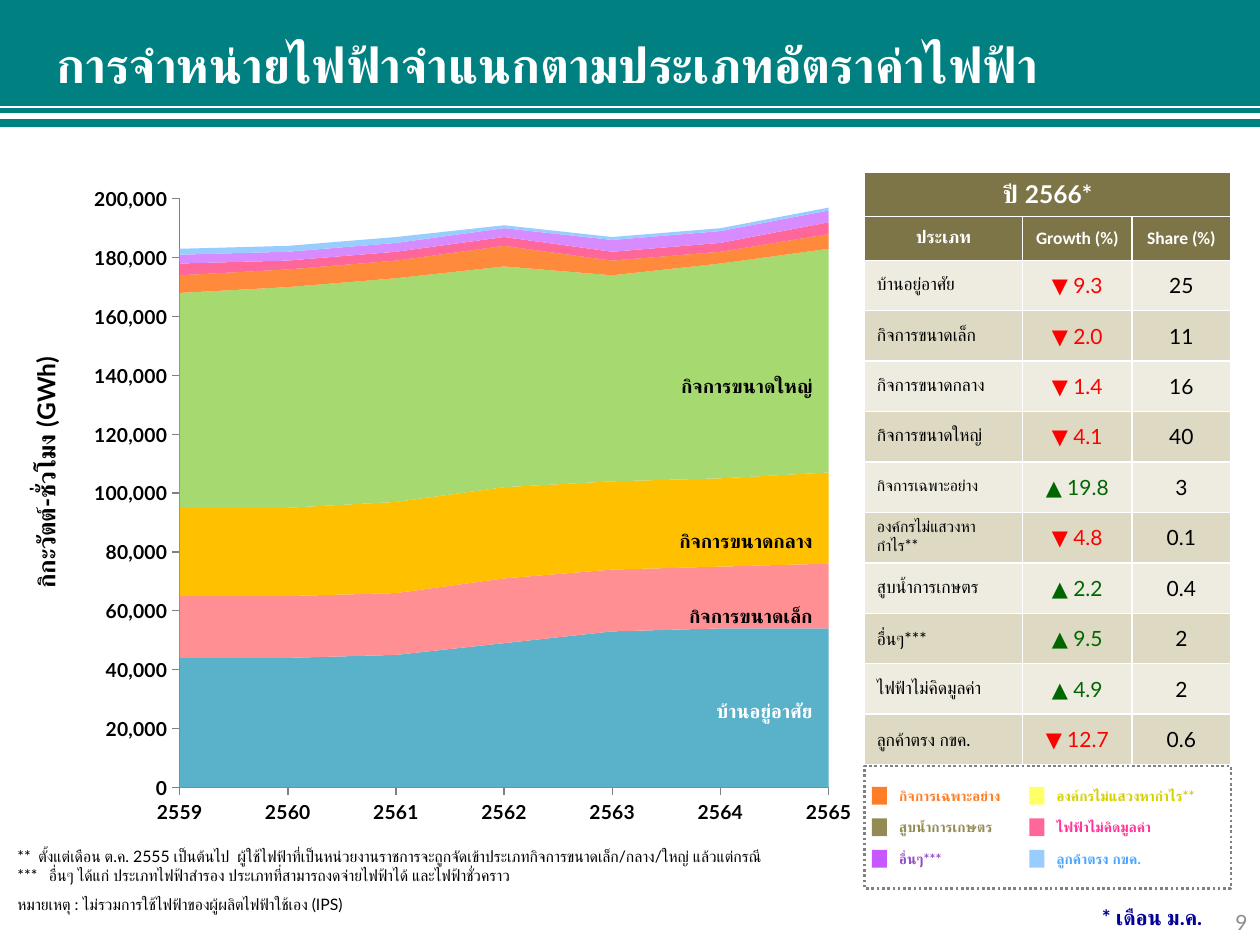
from dataclasses import dataclass
from typing import NamedTuple

from lxml.etree import SubElement
from pptx import Presentation
from pptx.chart.data import CategoryChartData
from pptx.dml.color import RGBColor
from pptx.enum.chart import XL_CHART_TYPE as ChartType, XL_TICK_MARK as Tick
from pptx.enum.dml import MSO_LINE
from pptx.enum.shapes import MSO_CONNECTOR, MSO_SHAPE
from pptx.enum.text import MSO_ANCHOR as Anchor, MSO_AUTO_SIZE as AutoSize, PP_ALIGN as Align
from pptx.oxml import parse_xml
from pptx.oxml.ns import nsdecls, qn
from pptx.util import Pt


@dataclass(frozen=True)
class Theme:
    font: str = "Lato"
    head_font: str = "Calibri"
    teal: str = "008080"
    white: str = "FFFFFF"
    black: str = "000000"
    grey: str = "808080"
    page: str = "8C8C8C"
    navy: str = "000099"
    olive: str = "7D7447"
    bands: tuple = ("EEECE1", "DDD9C3")
    up: str = "006600"
    down: str = "FF0000"
    title: int = 28
    large: int = 14
    value: int = 12
    label: int = 11
    body: int = 10
    note: int = 9
    key: int = 8


class Box(NamedTuple):
    x: float
    y: float
    w: float
    h: float

    def pts(self) -> list:
        return [Pt(v) for v in self]


class Series(NamedTuple):
    color: str
    thousands: tuple


class Rate(NamedTuple):
    name: str
    growth: float
    share: str
    size: int = 10


class Key(NamedTuple):
    name: str
    swatch: str
    color: str


T = Theme()
YEARS = [str(y) for y in range(2559, 2566)]
SERIES = [
    Series("5AB2CA", (44, 44, 45, 49, 53, 54, 54)),
    Series("FF8F92", (21, 21, 21, 22, 21, 21, 22)),
    Series("FFC000", (30, 30, 31, 31, 30, 30, 31)),
    Series("A7D971", (73, 75, 76, 75, 70, 73, 76)),
    Series("FF8A3B", (6, 6, 6, 7, 5, 4, 5)),
    Series("FFFF66", (0,) * 7),
    Series("948A54", (0,) * 7),
    Series("FF6699", (4, 3, 3, 3, 3, 3, 4)),
    Series("D88BFF", (3, 3, 3, 3, 4, 4, 4)),
    Series("99CCFF", (2, 2, 2, 1, 1, 1, 1)),
]
RATES = [
    Rate("บ้านอยู่อาศัย", -9.3, "25"),
    Rate("กิจการขนาดเล็ก", -2.0, "11"),
    Rate("กิจการขนาดกลาง", -1.4, "16"),
    Rate("กิจการขนาดใหญ่", -4.1, "40"),
    Rate("กิจการเฉพาะอย่าง", 19.8, "3", T.note),
    Rate("องค์กรไม่แสวงหากำไร**", -4.8, "0.1", T.note),
    Rate("สูบน้ำการเกษตร", 2.2, "0.4"),
    Rate("อื่นๆ***", 9.5, "2"),
    Rate("ไฟฟ้าไม่คิดมูลค่า", 4.9, "2"),
    Rate("ลูกค้าตรง กขค.", -12.7, "0.6"),
]
KEYS = [
    Key("กิจการเฉพาะอย่าง", "FF7D25", "FF7D25"),
    Key("องค์กรไม่แสวงหากำไร**", "FFFF66", "D5D000"),
    Key("สูบน้ำการเกษตร", "948A54", "948A54"),
    Key("ไฟฟ้าไม่คิดมูลค่า", "FF6699", "FF3399"),
    Key("อื่นๆ***", "C757FF", "954ECA"),
    Key("ลูกค้าตรง กขค.", "99CCFF", "4BA5FF"),
]
NOTES = [  # text, hanging indent, space before
    ("**\tตั้งแต่เดือน ต.ค. 2555 เป็นต้นไป  ผู้ใช้ไฟฟ้าที่เป็นหน่วยงานราชการจะถูกจัดเข้าประเภทกิจการขนาดเล็ก/กลาง/ใหญ่ แล้วแต่กรณี", 12, 0),
    ("***\tอื่นๆ ได้แก่ ประเภทไฟฟ้าสำรอง ประเภทที่สามารถงดจ่ายไฟฟ้าได้ และไฟฟ้าชั่วคราว", 18, 0),
    ("หมายเหตุ : ไม่รวมการใช้ไฟฟ้าของผู้ผลิตไฟฟ้าใช้เอง (IPS)", 0, 6),
]


def set_font(font, size: float, color: str = T.black, bold: bool = False, name: str = T.font) -> None:
    for key, value in {"size": Pt(size), "bold": bold, "name": name}.items():
        setattr(font, key, value)
    font.color.rgb = RGBColor.from_string(color)


def write(p, text: str, size: float, align=Align.LEFT, **fmt) -> None:
    p.alignment = align
    r = p.add_run()
    r.text = text
    set_font(r.font, size, **fmt)


def add_text(shapes, box: Box, text: str, size: float, align=Align.LEFT,
             anchor=Anchor.TOP, wrap: bool = True, **fmt):
    sp = shapes.add_textbox(*box.pts())
    for key, value in {"word_wrap": wrap, "vertical_anchor": anchor}.items():
        setattr(sp.text_frame, key, value)
    write(sp.text_frame.paragraphs[0], text, size, align, **fmt)
    return sp


def add_rect(shapes, box: Box, fill: str = ""):
    sp = shapes.add_shape(MSO_SHAPE.RECTANGLE, *box.pts())
    sp.shadow.inherit = False
    sp.line.fill.background()
    if fill:
        sp.fill.solid()
        sp.fill.fore_color.rgb = RGBColor.from_string(fill)
    else:
        sp.fill.background()
    return sp


def add_rule(shapes, y: float, width: float) -> None:
    c = shapes.add_connector(MSO_CONNECTOR.STRAIGHT, Pt(0), Pt(y), Pt(720), Pt(y))
    c.line.color.rgb = RGBColor.from_string(T.white)
    c.line.width = Pt(width)
    SubElement(c._element.spPr, qn("a:effectLst"))


def add_area_chart(shapes, box: Box) -> None:
    data = CategoryChartData(number_format="#,##0")
    data.categories = YEARS
    for n, s in enumerate(SERIES, 1):
        data.add_series(f"Series {n}", [v * 1000 for v in s.thousands])
    chart = shapes.add_chart(ChartType.AREA_STACKED, *box.pts(), data).chart
    chart.has_legend = chart.has_title = False
    for s, plotted in zip(SERIES, chart.plots[0].series):
        plotted.format.fill.solid()
        plotted.format.fill.fore_color.rgb = RGBColor.from_string(s.color)
    value = chart.value_axis
    for key, v in {"minimum_scale": 0, "maximum_scale": 200000, "major_unit": 20000}.items():
        setattr(value, key, v)
    value.tick_labels.number_format = "#,##0"
    value.tick_labels.number_format_is_linked = False
    for axis in (chart.category_axis, value):
        axis.has_major_gridlines = False
        axis.major_tick_mark = Tick.OUTSIDE
        axis.format.line.color.rgb = RGBColor.from_string(T.grey)
        set_font(axis.tick_labels.font, T.label, bold=True)
    # Areas start on the value axis, inside a fixed plot area
    for cross in value._element.findall(qn("c:crossBetween")):
        cross.set("val", "midCat")
    area = chart._chartSpace.chart.plotArea
    for old in area.findall(qn("c:layout")):
        area.remove(old)
    frame = {"x": 0.13, "y": 0.04, "w": 0.82, "h": 0.89}
    parts = '<c:layoutTarget val="inner"/><c:xMode val="edge"/><c:yMode val="edge"/>'
    parts += "".join(f'<c:{k} val="{v}"/>' for k, v in frame.items())
    area.insert(0, parse_xml(f'<c:layout {nsdecls("c")}><c:manualLayout>{parts}</c:manualLayout></c:layout>'))


def fill_cell(cell, text: str, fill: str, size: float, align=Align.CENTER, tight: bool = False, **fmt) -> None:
    cell.fill.solid()
    cell.fill.fore_color.rgb = RGBColor.from_string(fill)
    cell.vertical_anchor = Anchor.MIDDLE
    if tight:
        for side in ("left", "top", "right", "bottom"):
            setattr(cell, f"margin_{side}", Pt(0.7))
    write(cell.text_frame.paragraphs[0], text, size, align, **fmt)


def add_rate_table(shapes, box: Box) -> None:
    table = shapes.add_table(len(RATES) + 2, 3, *box.pts()).table
    for col, w in zip(table.columns, (90.5, 62.4, 56.6)):
        col.width = Pt(w)
    for i, row in enumerate(table.rows):
        row.height = Pt(25.1 if i < 2 else 28.8)
    head = {"color": T.white, "bold": True}
    table.cell(0, 0).merge(table.cell(0, 2))
    fill_cell(table.cell(0, 0), "ปี 2566*", T.olive, T.large, **head)
    for j, (text, font) in enumerate([("ประเภท", T.font), ("Growth (%)", T.head_font), ("Share (%)", T.head_font)]):
        fill_cell(table.cell(1, j), text, T.olive, T.body, name=font, **head)
    for i, rate in enumerate(RATES):
        band = T.bands[i % 2]
        mark, color = ("▲", T.up) if rate.growth > 0 else ("▼", T.down)
        name, growth, share = (table.cell(i + 2, j) for j in range(3))
        fill_cell(name, rate.name, band, rate.size, Align.LEFT)
        fill_cell(growth, f"{mark} {abs(rate.growth):.1f}", band, T.value, tight=True, color=color)
        fill_cell(share, rate.share, band, T.value, tight=True)


def add_key_box(shapes, box: Box) -> None:
    group = shapes.add_group_shape().shapes
    for i, key in enumerate(KEYS):
        x, y = box.x + 4.3 + i % 2 * 90, box.y + 11.9 + i // 2 * 18
        add_text(group, Box(x + 8.5, y - 3.3, 107, 17.3), key.name, T.key, color=key.color, bold=True)
        add_rect(group, Box(x, y, 8.6, 10.1), key.swatch)
    line = add_rect(group, box).line
    line.color.rgb = RGBColor.from_string(T.grey)
    line.width = Pt(1.5)
    line.dash_style = MSO_LINE.ROUND_DOT


def main() -> None:
    prs = Presentation()
    prs.slide_width, prs.slide_height = Pt(720), Pt(540)
    s = prs.slides.add_slide(prs.slide_layouts[5])
    shapes = s.shapes

    # Banner, with the title in front of it
    add_rect(shapes, Box(0, 0, 720, 72.7), T.teal)
    add_rule(shapes, 66.4, 3.75)
    add_rule(shapes, 61.2, 1.25)
    title = shapes.title
    for key, v in zip(("left", "top", "width", "height"), Box(25.2, 12.2, 690, 48.2).pts()):
        setattr(title, key, v)
    for key, v in {"auto_size": AutoSize.NONE, "vertical_anchor": Anchor.MIDDLE}.items():
        setattr(title.text_frame, key, v)
    write(title.text_frame.paragraphs[0], "การจำหน่ายไฟฟ้าจำแนกตามประเภทอัตราค่าไฟฟ้า", T.title, color=T.white, bold=True)
    shapes._spTree.append(title._element)

    # Chart, axis title and area labels
    add_area_chart(shapes, Box(43.9, 98.5, 452.2, 378))
    sp = add_text(shapes, Box(-137.5, 257.8, 327.6, 24.5), "กิกะวัตต์-ชั่วโมง (GWh)", T.large, Align.CENTER, bold=True)
    sp.rotation = 270
    for rate, y, color in zip(RATES, (396, 342, 298.8, 210.2), (T.white, T.black, T.black, T.black)):
        add_text(shapes, Box(331, y, 140.4, 20.9), rate.name, T.label, Align.RIGHT, color=color, bold=True)

    # Table and colour key
    add_rate_table(shapes, Box(493.9, 98.6, 209.5, 338.2))
    add_key_box(shapes, Box(493.9, 437.8, 209.5, 69.8))

    # Footnotes, month and page number
    tf = shapes.add_textbox(*Box(2.9, 480.2, 499, 46).pts()).text_frame
    tf.word_wrap = True
    for i, (text, hang, before) in enumerate(NOTES):
        p = tf.add_paragraph() if i else tf.paragraphs[0]
        write(p, text, T.note)
        p.space_before = Pt(before)
        for key, v in {"marL": hang, "indent": -hang}.items():
            p._p.get_or_add_pPr().set(key, str(Pt(v)))
    add_text(shapes, Box(681.8, 513.4, 38.2, 26.6), "9", T.value, Align.RIGHT, Anchor.MIDDLE, color=T.page)
    add_text(shapes, Box(612.7, 513.4, 81.4, 21.6), "* เดือน ม.ค.", T.value, Align.RIGHT, wrap=False, color=T.navy, bold=True)
    prs.save("out.pptx")


if __name__ == "__main__":
    main()
